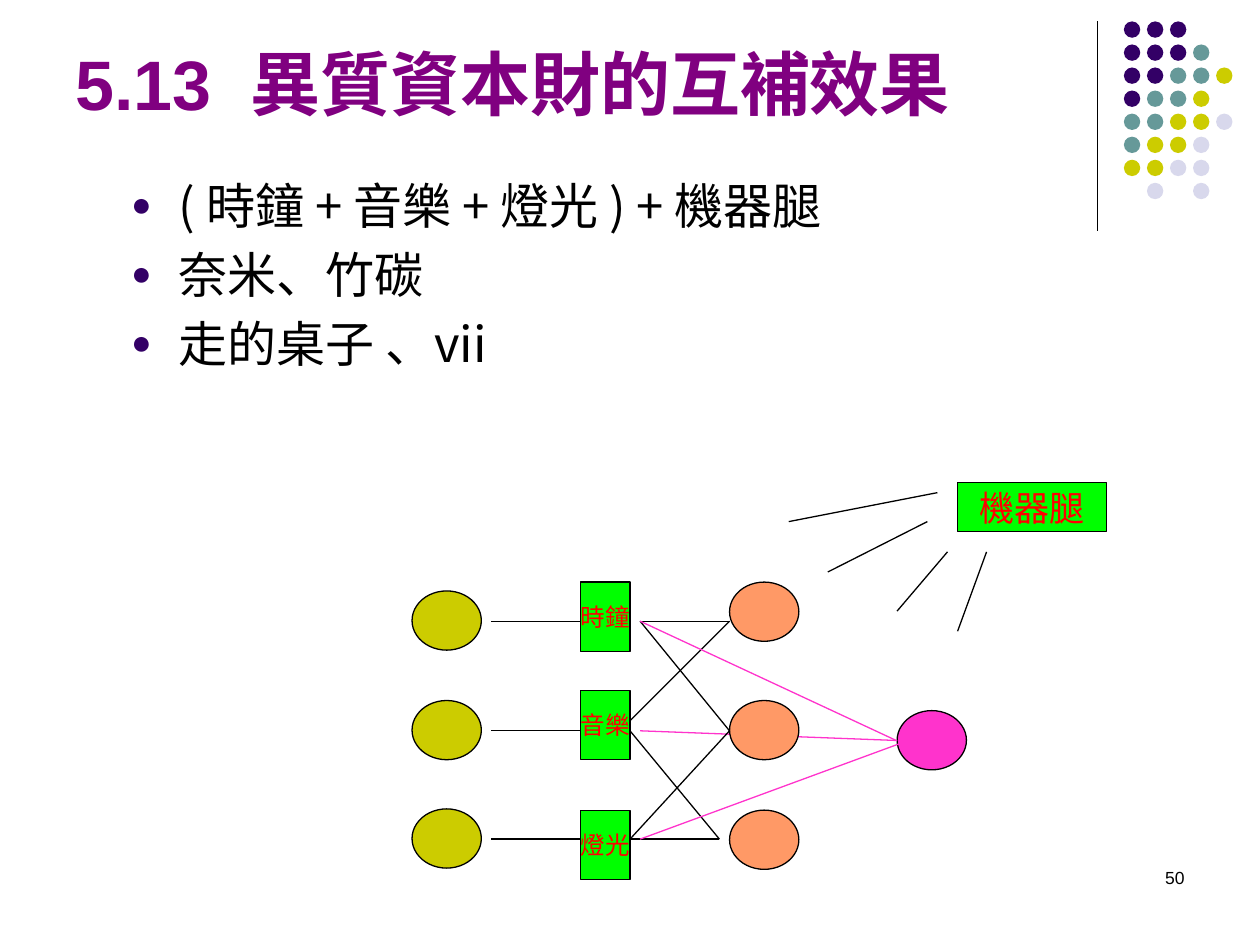
from lxml.etree import SubElement
from pptx import Presentation
from pptx.dml.color import RGBColor
from pptx.enum.shapes import MSO_CONNECTOR, MSO_SHAPE
from pptx.enum.text import MSO_ANCHOR, MSO_AUTO_SIZE, PP_ALIGN
from pptx.oxml.ns import qn
from pptx.util import Inches, Pt

CJK = "Noto Sans CJK TC"
BLACK, PINK, GREEN, OLIVE, ORANGE = "000000", "FF33CC", "00FF00", "CCCC00", "FF9966"
DOT_COLORS = {"P": "330066", "T": "669999", "O": OLIVE, "L": "D8D8EC"}
DOT_ROWS = ["PPP", "PPPT", "PPTTO", "PTTO", "TTOOL", "TOOL", "OOLL", " L L"]

# Network grid: column lefts and the height of each row's links
INPUT_X, LABEL_X, OUTPUT_X = 3.27, 4.61, 5.79
ROWS = [4.93, 5.8, 6.66]


def color(hex_code):
    return RGBColor.from_string(hex_code)


def place(item, left, top, width, height):
    item.left, item.top = Inches(left), Inches(top)
    item.width, item.height = Inches(width), Inches(height)


def write(paragraph, text, size, hex_code, font="Arial", bold=False,
          align=PP_ALIGN.LEFT):
    paragraph.alignment = align
    run = paragraph.add_run()
    run.text = text
    run.font.size, run.font.bold, run.font.name = Pt(size), bold, font
    run.font.color.rgb = color(hex_code)
    east_asian = SubElement(run._r.get_or_add_rPr(), qn("a:ea"))
    east_asian.set("typeface", CJK)


def add_figure(shapes, preset, left, top, width, height, fill, outlined=True):
    figure = shapes.add_shape(preset, Inches(left), Inches(top),
                              Inches(width), Inches(height))
    figure.shadow.inherit = False
    figure.fill.solid()
    figure.fill.fore_color.rgb = color(fill)
    if outlined:
        figure.line.color.rgb = color(BLACK)
        figure.line.width = Pt(0.75)
    else:
        figure.line.fill.background()
    return figure


def add_node(slide, left, top, fill):
    add_figure(slide.shapes, MSO_SHAPE.OVAL, left, top, 0.55, 0.47, fill)


def add_label(slide, text, left, top, width, height, size):
    label = add_figure(slide.shapes, MSO_SHAPE.RECTANGLE,
                       left, top, width, height, GREEN)
    frame = label.text_frame
    frame.word_wrap = False
    frame.vertical_anchor = MSO_ANCHOR.MIDDLE
    write(frame.paragraphs[0], text, size, "FF0000", align=PP_ALIGN.CENTER)


def add_link(slide, x1, y1, x2, y2, hex_code=BLACK):
    link = slide.shapes.add_connector(MSO_CONNECTOR.STRAIGHT, Inches(x1),
                                      Inches(y1), Inches(x2), Inches(y2))
    link.line.color.rgb = color(hex_code)
    link.line.width = Pt(0.75)
    SubElement(link._element.spPr, qn("a:effectLst"))


def add_bullet(paragraph):
    properties = paragraph._p.get_or_add_pPr()
    properties.set("marL", str(Inches(0.38)))
    properties.set("indent", str(-Inches(0.38)))
    bullet_color = SubElement(properties, qn("a:buClr"))
    SubElement(bullet_color, qn("a:srgbClr")).set("val", "330066")
    SubElement(properties, qn("a:buSzPct")).set("val", "70000")
    SubElement(properties, qn("a:buFont")).set("typeface", "Arial")
    SubElement(properties, qn("a:buChar")).set("char", "●")


def add_corner_dots(slide):
    add_link(slide, 8.71, 0.17, 8.71, 1.83)
    dots = slide.shapes.add_group_shape()
    for row, codes in enumerate(DOT_ROWS):
        for column, code in enumerate(codes):
            if code in DOT_COLORS:
                add_figure(dots.shapes, MSO_SHAPE.OVAL,
                           8.92 + column * 0.183, 0.17 + row * 0.183,
                           0.13, 0.13, DOT_COLORS[code], outlined=False)


def fill_title(slide, text):
    title = slide.shapes.title
    place(title, 0.5, 0.13, 8.14, 0.91)
    title.text_frame.auto_size = MSO_AUTO_SIZE.NONE
    title.text_frame.vertical_anchor = MSO_ANCHOR.BOTTOM
    write(title.text_frame.paragraphs[0], text, 40, "800080", bold=True)


def fill_body(slide, items):
    body = slide.placeholders[1]
    place(body, 0.94, 1.34, 6.43, 1.79)
    frame = body.text_frame
    frame.auto_size = MSO_AUTO_SIZE.NONE
    for index, item in enumerate(items):
        paragraph = frame.paragraphs[0] if index == 0 else frame.add_paragraph()
        paragraph.line_spacing, paragraph.space_before = Pt(33.8), Pt(5.6)
        add_bullet(paragraph)
        write(paragraph, item, 28, BLACK, font=CJK)


def add_page_number(slide, number):
    box = slide.shapes.add_textbox(Inches(7.17), Inches(6.83),
                                   Inches(2.33), Inches(0.5))
    box.text_frame.word_wrap = True
    write(box.text_frame.paragraphs[0], number, 10, BLACK, align=PP_ALIGN.RIGHT)


def add_network(slide):
    top, middle, bottom = ROWS
    # The middle pink link passes behind the output nodes
    add_link(slide, 5.08, middle, 7.2, 5.88, PINK)

    # Inputs, product labels and outputs
    for link_y, name, label_y, output_y in zip(
            ROWS, ["時鐘", "音樂", "燈光"], [4.62, 5.48, 6.43], [4.62, 5.56, 6.43]):
        add_node(slide, INPUT_X, link_y - 0.24, OLIVE)
        add_label(slide, name, LABEL_X, label_y, 0.39, 0.55, 14)
        add_node(slide, OUTPUT_X, output_y, ORANGE)
        add_link(slide, 3.9, link_y, LABEL_X, link_y)
    add_node(slide, 7.12, 5.64, PINK)

    # Links from the products to the outputs
    for x1, y1, x2, y2 in [(5, middle, 5.71, bottom), (5, 5.72, OUTPUT_X, top),
                           (5.08, top, OUTPUT_X, middle),
                           (5, bottom, OUTPUT_X, middle),
                           (5.08, top, OUTPUT_X, top), (5, bottom, 5.71, bottom)]:
        add_link(slide, x1, y1, x2, y2)

    # Pink links to the new combination
    add_link(slide, 5.08, top, 7.12, 5.88, PINK)
    add_link(slide, 5.08, bottom, 7.2, 5.88, PINK)


def add_robot_leg(slide):
    add_label(slide, "機器腿", 7.6, 3.83, 1.18, 0.39, 20)
    for ray in [(6.26, 4.14, 7.44, 3.91), (6.57, 4.54, 7.36, 4.14),
                (7.12, 4.85, 7.52, 4.38), (7.83, 4.38, 7.6, 5.01)]:
        add_link(slide, *ray)


def main():
    deck = Presentation()
    deck.slide_width, deck.slide_height = Inches(10), Inches(7.5)
    slide = deck.slides.add_slide(deck.slide_layouts[1])
    add_corner_dots(slide)
    add_page_number(slide, "50")
    fill_title(slide, "5.13  異質資本財的互補效果")
    fill_body(slide, ["( 時鐘 + 音樂 + 燈光 ) + 機器腿", "奈米、竹碳", "走的桌子 、vii"])
    add_network(slide)
    add_robot_leg(slide)
    deck.save("out.pptx")


if __name__ == "__main__":
    main()
